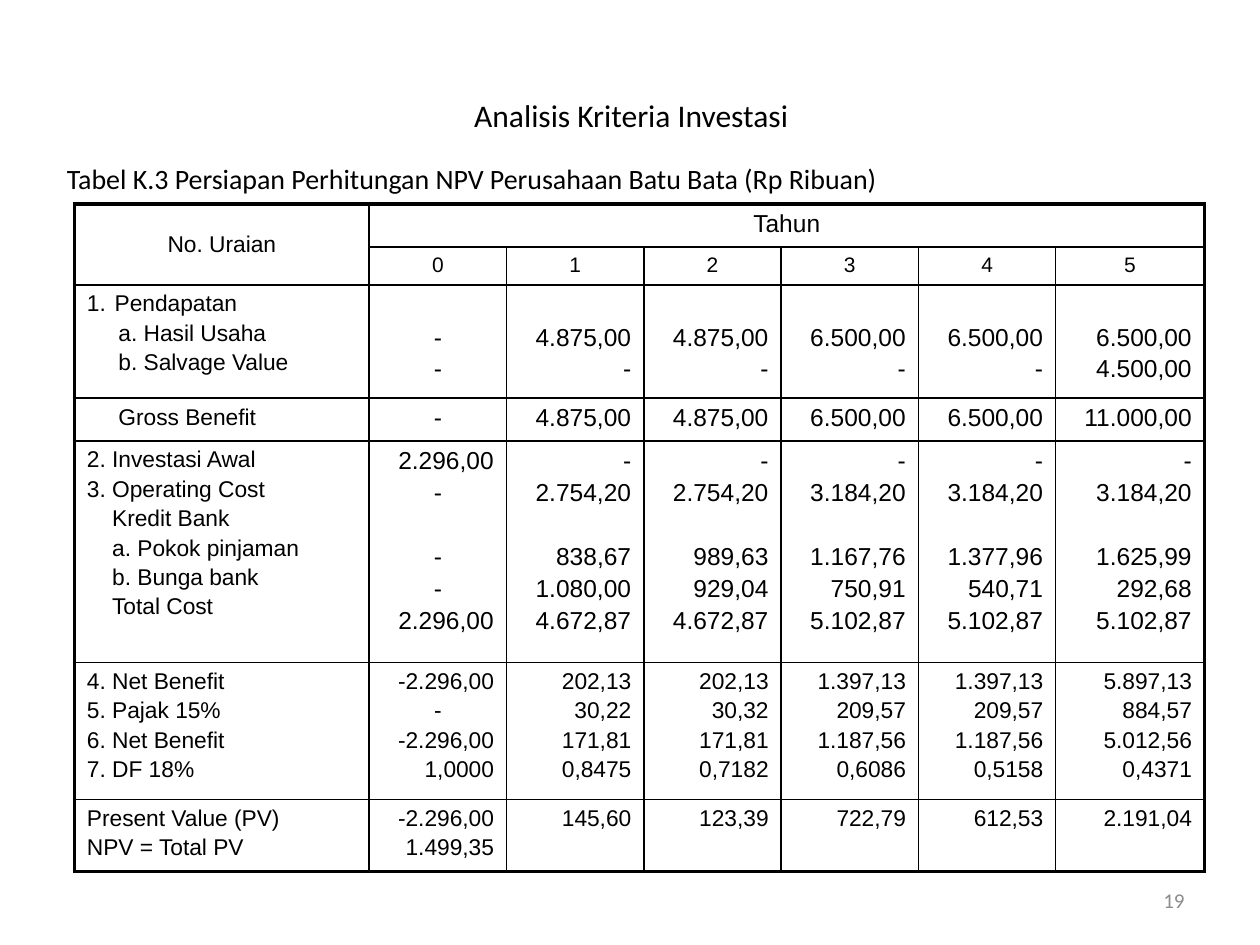
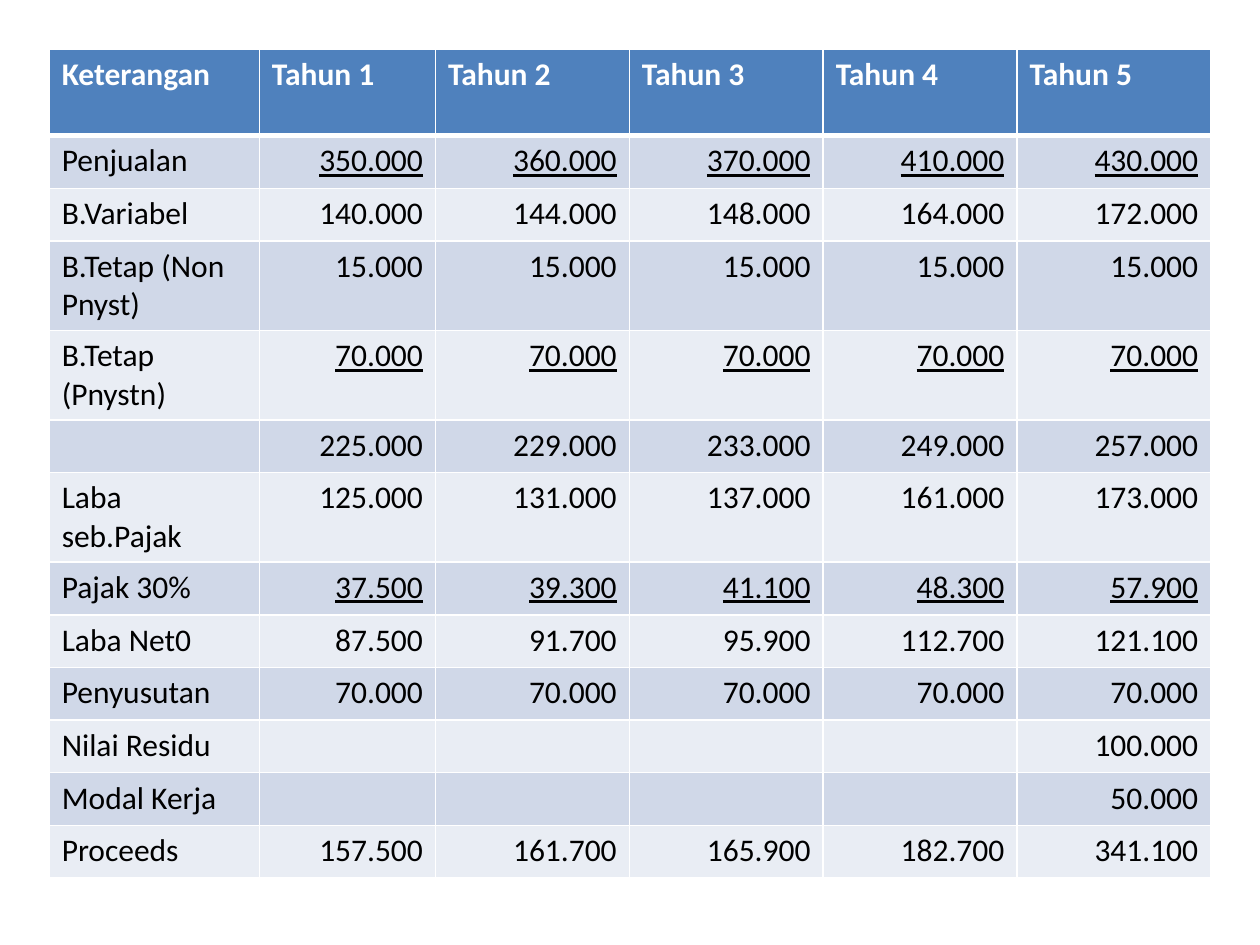
from typing import NamedTuple

from pptx import Presentation
from pptx.dml.color import RGBColor
from pptx.enum.text import MSO_ANCHOR as ANCHOR, MSO_AUTO_SIZE as AUTO_SIZE, PP_ALIGN as ALIGN
from pptx.oxml.ns import qn
from pptx.util import Inches, Pt
from lxml.etree import SubElement

BLACK = RGBColor(0x00, 0x00, 0x00)
WHITE = RGBColor(0xFF, 0xFF, 0xFF)
GREY = RGBColor(0x8C, 0x8C, 0x8C)
BLUE = RGBColor(0x4F, 0x81, 0xBD)
BANDS = RGBColor(0xD0, 0xD8, 0xE8), RGBColor(0xE9, 0xED, 0xF4)

SLIDE_W, SLIDE_H = Inches(10), Inches(7.5)
LEAD, LINE = 0.18, 1.33
INSET = Inches(0.05)


class Box(NamedTuple):
    """Left, top, width and height as percentages of the slide."""
    left: float
    top: float
    width: float
    height: float

    def lengths(self):
        """Return the box in slide units."""
        sides = (SLIDE_W, SLIDE_H) * 2
        return [int(side * share / 100) for side, share in zip(sides, self)]


TITLE_BOX = Box(5.1, 3.9, 90, 16.6)
CAPTION_BOX = Box(4.3, 16.4, 90.7, 6)
NUMBER_BOX = Box(71.7, 92.6, 23.3, 5.4)
NPV_BOX = Box(5.9, 21.6, 89.7, 70.6)
PROCEEDS_BOX = Box(3.9, 5.2, 92.2, 87.6)

NPV_COLUMNS = [2.34] + [1.09] * 5 + [1.18]
NPV_ROWS = [0.34, 0.3, 0.9, 0.34, 1.76, 1.09, 0.57]
NPV_YEARS = "0 1 2 3 4 5".split()
NPV_ENTRIES = [
    ("#Pendapatan|>a. Hasil Usaha|>b. Salvage Value", 14, 0.25,
     ["|-|-", "|4.875,00|-", "|4.875,00|-", "|6.500,00|-", "|6.500,00|-", "|6.500,00|4.500,00"]),
    (">Gross Benefit", 14, 0.25,
     ["-", "4.875,00", "4.875,00", "6.500,00", "6.500,00", "11.000,00"]),
    ("2. Investasi Awal|3. Operating Cost|>Kredit Bank|>a. Pokok pinjaman|>b. Bunga bank|>Total Cost", 14, 0.2,
     ["2.296,00|-||-|-|2.296,00",
      "-|2.754,20||838,67|1.080,00|4.672,87",
      "-|2.754,20||989,63|929,04|4.672,87",
      "-|3.184,20||1.167,76|750,91|5.102,87",
      "-|3.184,20||1.377,96|540,71|5.102,87",
      "-|3.184,20||1.625,99|292,68|5.102,87"]),
    ("4. Net Benefit|5. Pajak 15%|6. Net Benefit|7. DF 18%", 13, 0,
     ["-2.296,00|-|-2.296,00|1,0000",
      "202,13|30,22|171,81|0,8475",
      "202,13|30,32|171,81|0,7182",
      "1.397,13|209,57|1.187,56|0,6086",
      "1.397,13|209,57|1.187,56|0,5158",
      "5.897,13|884,57|5.012,56|0,4371"]),
    ("Present Value (PV)|NPV = Total PV", 13, 0,
     ["-2.296,00|1.499,35", "145,60", "123,39", "722,79", "612,53", "2.191,04"]),
]

PROCEEDS_COLUMNS = [1.67, 1.4] + [1.54] * 4
SINGLE, DOUBLE = 0.42, 0.71
PROCEEDS_HEADER = ["Keterangan"] + [f"Tahun {year}" for year in range(1, 6)]
PROCEEDS_ENTRIES = [
    ("Penjualan", SINGLE, True, ["350.000", "360.000", "370.000", "410.000", "430.000"]),
    ("B.Variabel", SINGLE, False, ["140.000", "144.000", "148.000", "164.000", "172.000"]),
    ("B.Tetap (Non Pnyst)", DOUBLE, False, ["15.000"] * 5),
    ("B.Tetap (Pnystn)", DOUBLE, True, ["70.000"] * 5),
    ("", SINGLE, False, ["225.000", "229.000", "233.000", "249.000", "257.000"]),
    ("Laba seb.Pajak", DOUBLE, False, ["125.000", "131.000", "137.000", "161.000", "173.000"]),
    ("Pajak 30%", SINGLE, True, ["37.500", "39.300", "41.100", "48.300", "57.900"]),
    ("Laba Net0", SINGLE, False, ["87.500", "91.700", "95.900", "112.700", "121.100"]),
    ("Penyusutan", SINGLE, False, ["70.000"] * 5),
    ("Nilai Residu", SINGLE, False, [""] * 4 + ["100.000"]),
    ("Modal Kerja", SINGLE, False, [""] * 4 + ["50.000"]),
    ("Proceeds", SINGLE, False, ["157.500", "161.700", "165.900", "182.700", "341.100"]),
]
PROCEEDS_ROWS = [0.69] + [height for _, height, _, _ in PROCEEDS_ENTRIES]


def assign(target, **values):
    """Set each named attribute on the target."""
    for attribute, value in values.items():
        setattr(target, attribute, value)


def write(paragraph, text, size, colour=BLACK, align=ALIGN.LEFT, font="Calibri", **style):
    """Put one formatted run into the paragraph."""
    run = paragraph.add_run()
    run.text = text
    assign(run.font, name=font, size=Pt(size), **style)
    run.font.color.rgb = colour
    paragraph.alignment = align


def indent(paragraph, left, bullet=None, hanging=0):
    """Set the left margin and bullet kind of a paragraph."""
    properties = paragraph._p.get_or_add_pPr()
    properties.set("marL", str(Inches(left)))
    properties.set("indent", str(-Inches(hanging)))
    if bullet:
        mark = SubElement(properties, qn(f"a:{bullet}"))
        if bullet == "buAutoNum":
            mark.set("type", "arabicPeriod")


def add_grid(slide, box, columns, rows):
    """Add an unbanded table whose columns and rows share out the box."""
    left, top, width, height = box.lengths()
    table = slide.shapes.add_table(len(rows), len(columns), left, top, width, height).table
    assign(table, first_row=False, horz_banding=False)
    for column, weight in zip(table.columns, columns):
        column.width = int(width * weight / sum(columns))
    for row, weight in zip(table.rows, rows):
        row.height = int(height * weight / sum(rows))
    return table


def border(cell, colour, **widths):
    """Draw the cell's sides L, R, T and B in the given point widths."""
    properties = cell._tc.get_or_add_tcPr()
    for side, width in widths.items():
        line = SubElement(properties, qn(f"a:ln{side}"), w=str(Pt(width)))
        SubElement(SubElement(line, qn("a:solidFill")), qn("a:srgbClr"), val=str(colour))


def frame_npv(table):
    """Rule the table with thin inner lines and a thick outline."""
    last_row, last_column = len(table.rows), len(table.columns)
    for row in range(last_row):
        for column in range(last_column):
            cell = table.cell(row, column)
            on_edge = {
                "L": column == 0,
                "R": column + cell.span_width == last_column,
                "T": row == 0,
                "B": row + cell.span_height == last_row,
            }
            border(cell, BLACK, **{side: 2.25 if edge else 1 for side, edge in on_edge.items()})
            cell.fill.background()


def write_stack(cell, entry, size, align, level=0):
    """Write lines parted by bars: an empty one is a gap, > indents, # numbers."""
    frame, gap, started = cell.text_frame, 0, False
    for line in entry.split("|"):
        if not line:
            gap += size * LINE
            continue
        paragraph = frame.add_paragraph() if started else frame.paragraphs[0]
        if started:
            paragraph.space_before = Pt(round(size * LEAD + gap, 1))
        else:
            cell.margin_top = INSET + Pt(gap)
        if line[0] == "#":
            indent(paragraph, 0.22, "buAutoNum", hanging=0.22)
        elif line[0] == ">":
            indent(paragraph, level)
        write(paragraph, line.lstrip("#>"), size, font="Arial",
              align=ALIGN.CENTER if line == "-" and align == ALIGN.CENTER else
              ALIGN.RIGHT if line != "-" and align == ALIGN.CENTER else align)
        gap, started = 0, True


def npv_table(slide, box):
    """Build the NPV preparation table."""
    table = add_grid(slide, box, NPV_COLUMNS, NPV_ROWS)
    heading, years = table.cell(0, 0), table.cell(0, 1)
    heading.merge(table.cell(1, 0))
    years.merge(table.cell(0, len(NPV_YEARS)))
    frame_npv(table)
    heading.vertical_anchor = ANCHOR.MIDDLE
    headings = [(heading, "No. Uraian", 13), (years, "Tahun", 14)]
    headings += [(table.cell(1, column), year, 12) for column, year in enumerate(NPV_YEARS, 1)]
    for cell, text, size in headings:
        write(cell.text_frame.paragraphs[0], text, size, align=ALIGN.CENTER, font="Arial")
    for row, (label, size, level, amounts) in enumerate(NPV_ENTRIES, 2):
        write_stack(table.cell(row, 0), label, 13, ALIGN.LEFT, level)
        for column, amount in enumerate(amounts, 1):
            align = ALIGN.CENTER if column == 1 else ALIGN.RIGHT
            write_stack(table.cell(row, column), amount, size, align)


def proceeds_cell(cell, text, fill, top=1, bottom=1, **style):
    """Rule, fill and write one cell of the proceeds table."""
    border(cell, WHITE, L=1, R=1, T=top, B=bottom)
    cell.fill.solid()
    cell.fill.fore_color.rgb = fill
    if text:
        write(cell.text_frame.paragraphs[0], text, 18, **style)


def proceeds_table(slide, box):
    """Build the banded table of yearly proceeds."""
    table = add_grid(slide, box, PROCEEDS_COLUMNS, PROCEEDS_ROWS)
    for column, heading in enumerate(PROCEEDS_HEADER):
        proceeds_cell(table.cell(0, column), heading, BLUE, bottom=3, colour=WHITE, bold=True)
    for row, (label, _, underlined, amounts) in enumerate(PROCEEDS_ENTRIES, 1):
        band, top = BANDS[(row - 1) % 2], 3 if row == 1 else 1
        proceeds_cell(table.cell(row, 0), label, band, top)
        for column, amount in enumerate(amounts, 1):
            proceeds_cell(table.cell(row, column), amount, band, top,
                          align=ALIGN.RIGHT, underline=underlined)


def fill_text(shape, box, text, size, anchor, **style):
    """Move a text shape into the box and write its single line."""
    left, top, width, height = box.lengths()
    assign(shape, left=left, top=top, width=width, height=height)
    assign(shape.text_frame, word_wrap=True, auto_size=AUTO_SIZE.NONE, vertical_anchor=anchor)
    paragraph = shape.text_frame.paragraphs[0]
    write(paragraph, text, size, **style)
    return paragraph


def npv_slide(deck):
    """Add the slide with title, caption, NPV table and page number."""
    slide = deck.slides.add_slide(deck.slide_layouts[1])
    fill_text(slide.shapes.title, TITLE_BOX, "Analisis Kriteria Investasi", 18,
              ANCHOR.MIDDLE, align=ALIGN.CENTER)
    caption = fill_text(slide.placeholders[1], CAPTION_BOX,
                        "Tabel K.3 Persiapan Perhitungan NPV Perusahaan Batu Bata (Rp Ribuan)",
                        16, ANCHOR.TOP)
    indent(caption, 0, "buNone")
    npv_table(slide, NPV_BOX)
    page_number = slide.shapes.add_textbox(*NUMBER_BOX.lengths())
    fill_text(page_number, NUMBER_BOX, "19", 12, ANCHOR.MIDDLE, colour=GREY, align=ALIGN.RIGHT)


def proceeds_slide(deck):
    """Add the slide filled by the proceeds table."""
    slide = deck.slides.add_slide(deck.slide_layouts[6])
    proceeds_table(slide, PROCEEDS_BOX)


def main():
    """Build and save the deck."""
    deck = Presentation()
    assign(deck, slide_width=SLIDE_W, slide_height=SLIDE_H)
    npv_slide(deck)
    proceeds_slide(deck)
    deck.save("out.pptx")


if __name__ == "__main__":
    main()
